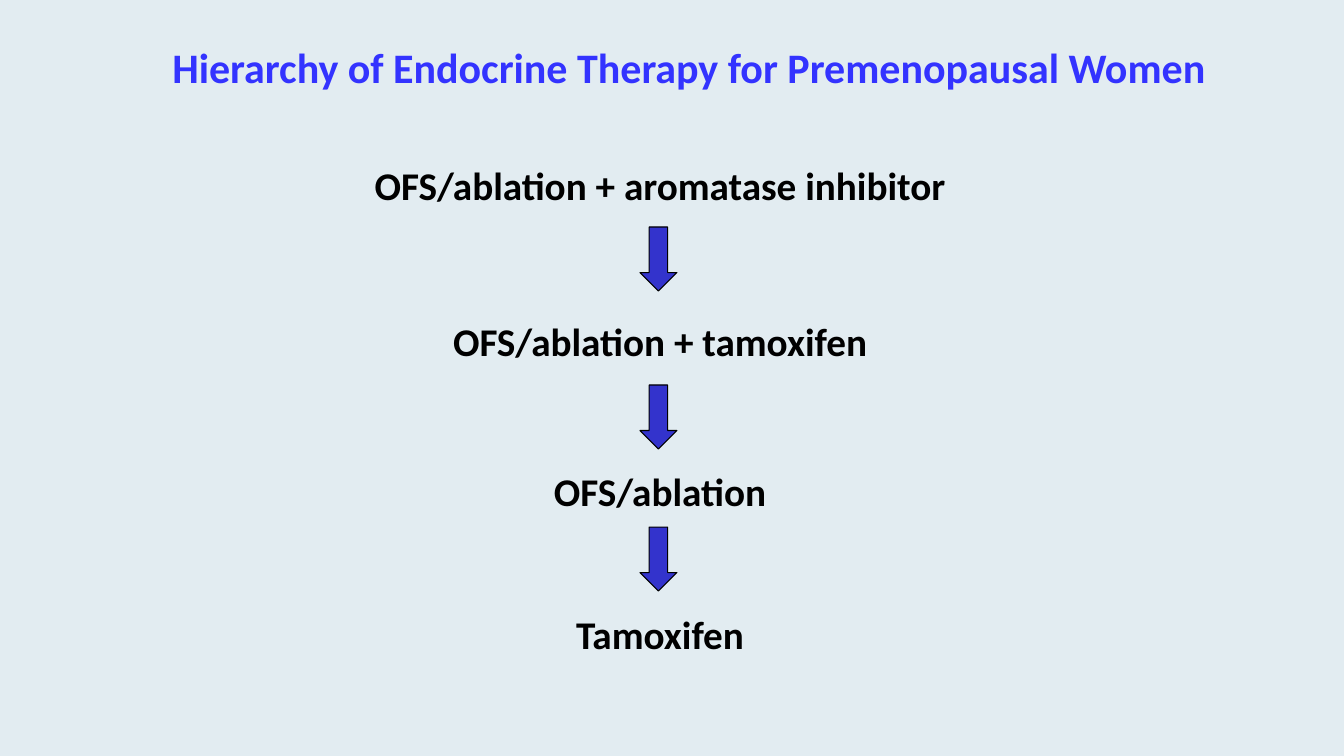
from pptx import Presentation
from pptx.dml.color import RGBColor
from pptx.enum.shapes import MSO_SHAPE as Shape
from pptx.enum.text import MSO_ANCHOR as Anchor, MSO_AUTO_SIZE as AutoSize, PP_ALIGN as Align
from pptx.util import Pt

PX = 914400 / 100.8
COLORS = {"background": "E2ECF1", "title": "3333FF", "text": "000000",
          "arrow": "3333CC", "outline": "000000"}


def px(*lengths):
    """Turn pixel lengths into EMU."""
    return [round(length * PX) for length in lengths]


def add_text(page, text, bounds, size, color, frame_format):
    """Add one bold, centred line of text and return its paragraph."""
    frame = page.shapes.add_textbox(*px(*bounds)).text_frame
    for name, value in frame_format.items():
        setattr(frame, name, value)
    para = frame.paragraphs[0]
    para.alignment = Align.CENTER
    span = para.add_run()
    span.text = text
    for name, value in {"name": "Calibri", "size": Pt(size), "bold": True}.items():
        setattr(span.font, name, value)
    span.font.color.rgb = RGBColor.from_string(COLORS[color])
    return para


deck = Presentation()
deck.slide_width, deck.slide_height = px(1344, 756)
page = deck.slides.add_slide(deck.slide_layouts[6])
page.background.fill.solid()
page.background.fill.fore_color.rgb = RGBColor.from_string(COLORS["background"])

title_format = {"word_wrap": True, "vertical_anchor": Anchor.MIDDLE,
                "margin_left": 0, "margin_top": 0, "margin_right": 0, "margin_bottom": 0}
title = add_text(page, "Hierarchy of Endocrine Therapy for Premenopausal Women",
                 (132, 0, 1115, 141), 30, "title", title_format)
title.line_spacing = 0.88

# Therapies from strongest to weakest: text, top, width
CENTER = 660
therapies = [
    ("OFS/ablation + aromatase inhibitor", 156, 644),
    ("OFS/ablation + tamoxifen", 312, 588),
    ("OFS/ablation", 462, 246),
    ("Tamoxifen", 605, 246),
]
step_format = {"word_wrap": True, "auto_size": AutoSize.SHAPE_TO_FIT_TEXT}
for therapy, top, width in therapies:
    add_text(page, therapy, (CENTER - width // 2, top, width, 57), 28, "text", step_format)

for top in (227, 385, 527):
    arrow = page.shapes.add_shape(Shape.DOWN_ARROW, *px(640, top, 37, 64))
    arrow.shadow.inherit = False
    arrow.fill.solid()
    arrow.fill.fore_color.rgb = RGBColor.from_string(COLORS["arrow"])
    arrow.line.color.rgb = RGBColor.from_string(COLORS["outline"])
    arrow.line.width = Pt(0.75)

deck.save("out.pptx")
